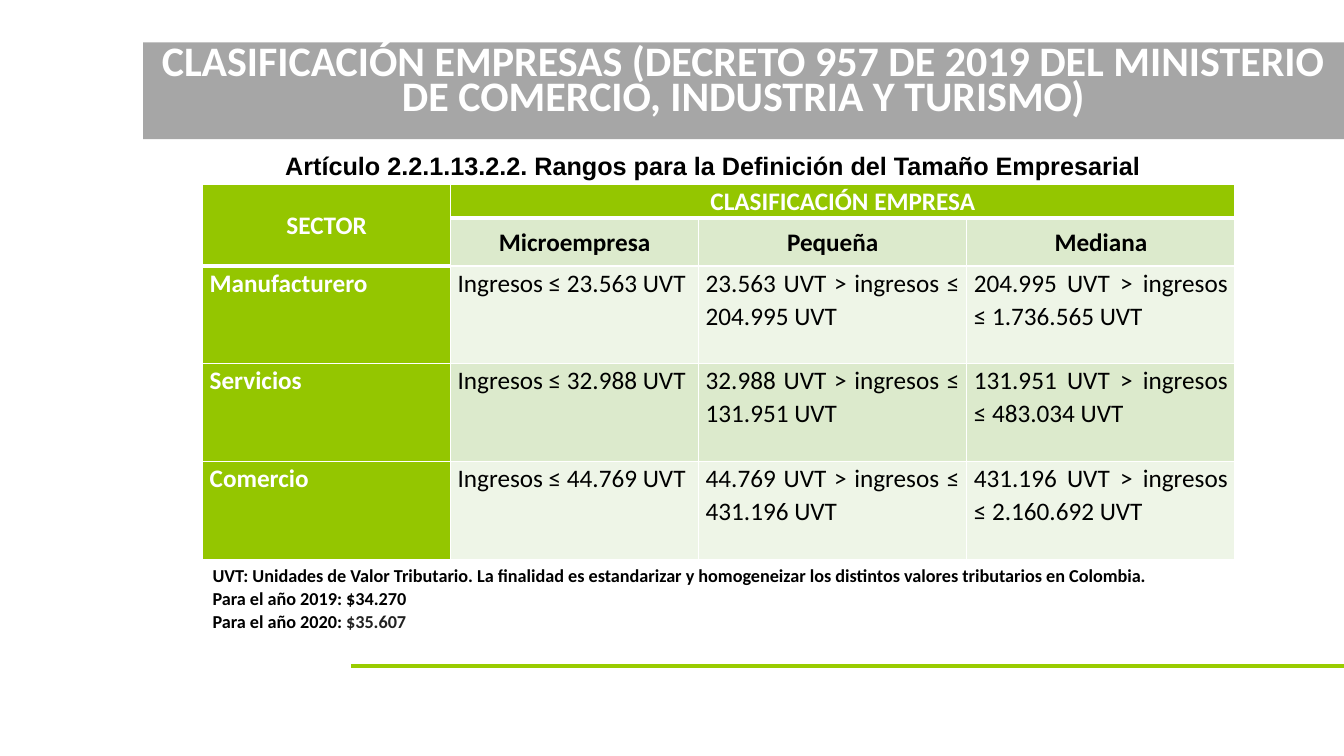
import pptx
import pptx.util
import pptx.dml.color
import pptx.enum.shapes
import pptx.enum.text
import pptx.oxml
import pptx.oxml.ns

Inches, Pt = pptx.util.Inches, pptx.util.Pt
ALIGN = pptx.enum.text.PP_ALIGN
ANCHOR = pptx.enum.text.MSO_ANCHOR
W, H = 13.33, 7.5
GREEN, WHITE, BLACK = "94C600", "FFFFFF", "000000"
BANDS = ["EEF5E7", "DCEACC"]
CELL_INSETS = {"margin_left": Inches(0.07), "margin_right": Inches(0.07),
               "margin_top": 0, "margin_bottom": 0}

HEADINGS = ["Microempresa", "Pequeña", "Mediana"]
SECTORS = [
    ["Manufacturero", "Ingresos ≤ 23.563 UVT", "23.563 UVT > ingresos ≤ 204.995 UVT",
     "204.995 UVT > ingresos ≤ 1.736.565 UVT"],
    ["Servicios", "Ingresos ≤ 32.988 UVT", "32.988 UVT > ingresos ≤ 131.951 UVT",
     "131.951 UVT > ingresos ≤ 483.034 UVT"],
    ["Comercio", "Ingresos ≤ 44.769 UVT", "44.769 UVT > ingresos ≤ 431.196 UVT",
     "431.196 UVT > ingresos ≤ 2.160.692 UVT"],
]
NOTES = [
    [("UVT: Unidades de Valor Tributario. La finalidad es estandarizar y homogeneizar "
      "los distintos valores tributarios en Colombia.", BLACK)],
    [("Para el año 2019: $34.270", BLACK)],
    [("Para el año 2020: ", BLACK), ("$35.607", "222222")],
]


def rgb(value):
    return pptx.dml.color.RGBColor.from_string(value)


def paint(target, color):
    target.fill.solid()
    target.fill.fore_color.rgb = rgb(color)


def apply(target, values):
    for name, value in values.items():
        setattr(target, name, value)


def write(p, runs, size, align, spacing=1.07, font="Calibri", bold=True):
    apply(p, {"alignment": align, "line_spacing": spacing})
    for text, color in runs:
        r = p.add_run()
        r.text = text
        apply(r.font, {"size": Pt(size), "name": font, "bold": bold})
        r.font.color.rgb = rgb(color)


def border(cell, bottom):
    tcPr = cell._tc.get_or_add_tcPr()
    for i, (side, width) in enumerate([("L", 1), ("R", 1), ("T", 1), ("B", bottom)]):
        tcPr.insert(i, pptx.oxml.parse_xml(
            f'<a:ln{side} {pptx.oxml.ns.nsdecls("a")} w="{Pt(width)}"><a:solidFill>'
            f'<a:srgbClr val="{WHITE}"/></a:solidFill></a:ln{side}>'))


def add_rule(slide, left, top, right):
    line = slide.shapes.add_connector(pptx.enum.shapes.MSO_CONNECTOR.STRAIGHT,
                                      *map(Inches, (left, top, right, top)))
    line.line.color.rgb = rgb("99CC00")
    line.line.width = Pt(3)
    line._element.spPr.append(pptx.oxml.parse_xml(
        f'<a:effectLst {pptx.oxml.ns.nsdecls("a")}/>'))


def add_title(slide, box, text):
    sp = slide.shapes.add_shape(pptx.enum.shapes.MSO_SHAPE.RECTANGLE, *map(Inches, box))
    sp.shadow.inherit = False
    paint(sp, "A6A6A6")
    sp.line.fill.background()
    tf = sp.text_frame
    apply(tf, {"word_wrap": True, "vertical_anchor": ANCHOR.TOP, "margin_top": Inches(0.06)})
    write(tf.paragraphs[0], [(text, WHITE)], 30, ALIGN.CENTER, 0.7)


def add_text(slide, box, paragraphs, size, font="Calibri"):
    tf = slide.shapes.add_textbox(*map(Inches, box)).text_frame
    tf.word_wrap = True
    for i, runs in enumerate(paragraphs):
        p = tf.add_paragraph() if i else tf.paragraphs[0]
        write(p, runs, size, ALIGN.JUSTIFY, font=font)


def add_table(slide, box, widths, heights):
    table = slide.shapes.add_table(len(heights), len(widths), *map(Inches, box)).table
    for column, width in zip(table.columns, widths):
        column.width = Inches(width)
    for row, height in zip(table.rows, heights):
        row.height = Inches(height)
    rows = [["SECTOR", "CLASIFICACIÓN EMPRESA", "", ""], ["", *HEADINGS], *SECTORS]
    for i, texts in enumerate(rows):
        for j, text in enumerate(texts):
            cell = table.cell(i, j)
            header = i < 2
            green = i == 0 or j == 0
            apply(cell, CELL_INSETS)
            cell.vertical_anchor = ANCHOR.MIDDLE if header else ANCHOR.TOP
            paint(cell, GREEN if green else BANDS[i % 2])
            border(cell, 3 if header and green else 1)
            if text:
                write(cell.text_frame.paragraphs[0], [(text, WHITE if green else BLACK)], 18,
                      ALIGN.CENTER if header else ALIGN.JUSTIFY, bold=header or green)
    table.cell(0, 0).merge(table.cell(1, 0))
    table.cell(0, 1).merge(table.cell(0, 3))


def main():
    prs = pptx.Presentation()
    apply(prs, {"slide_width": Inches(W), "slide_height": Inches(H)})
    slide = prs.slides.add_slide(prs.slide_layouts[6])
    left, width = 2.01, 10.25
    add_rule(slide, 3.48, 6.61, W)
    add_title(slide, (1.42, 0.42, W - 1.42, 0.96),
              "CLASIFICACIÓN EMPRESAS (DECRETO 957 DE 2019 DEL MINISTERIO DE COMERCIO, "
              "INDUSTRIA Y TURISMO)")
    add_table(slide, (left, 1.83, width, 3.72), [2.46] * 2 + [2.66] * 2,
              [0.33, 0.48] + [0.97] * 3)
    add_text(slide, (2.73, 1.42, 8.81, 0.41),
             [[("Artículo 2.2.1.13.2.2. Rangos para la Definición del Tamaño Empresarial", BLACK)]],
             18, "Arial")
    add_text(slide, (left, 5.53, width, 0.79), NOTES, 13)
    prs.save("out.pptx")


if __name__ == "__main__":
    main()
